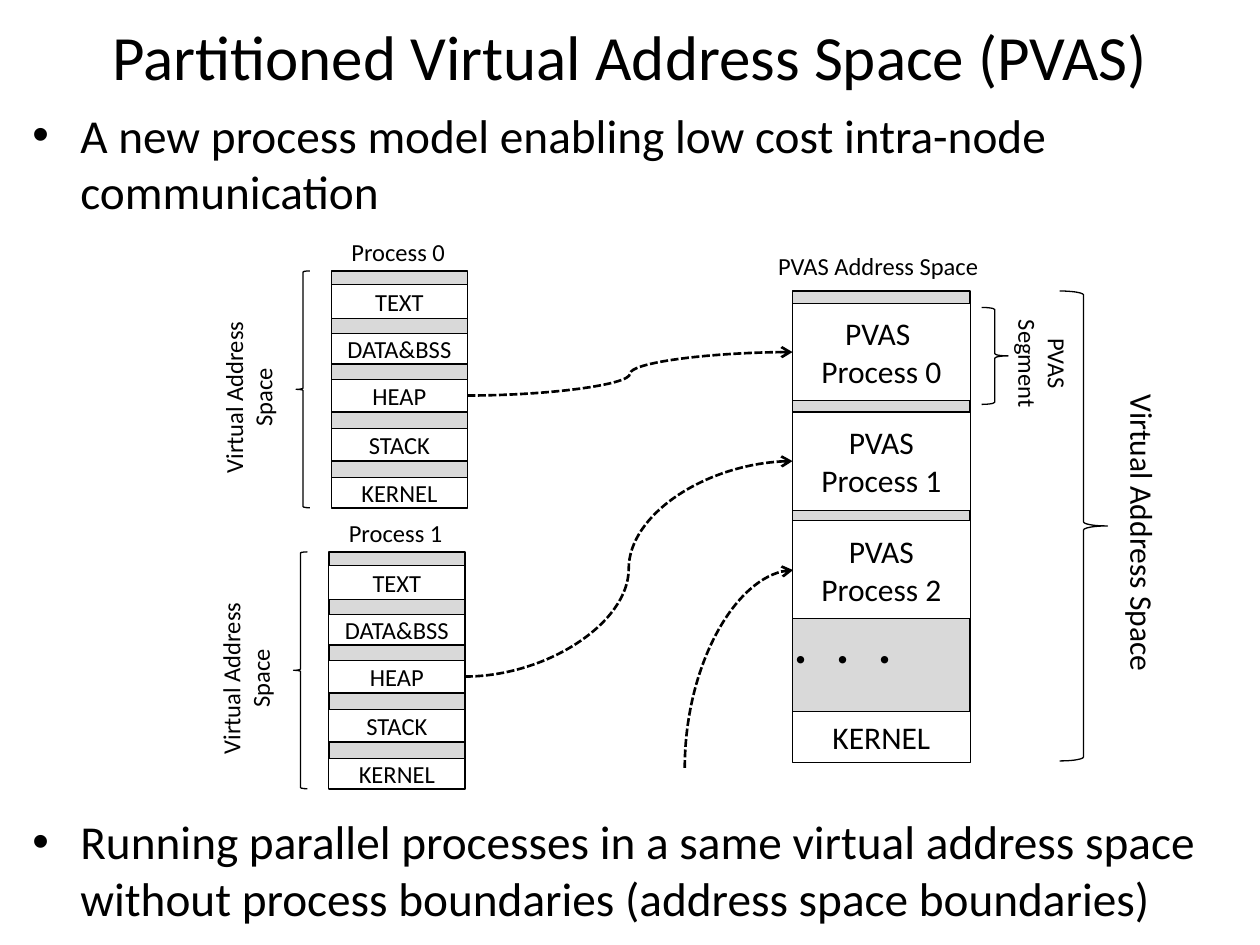
from dataclasses import dataclass

from lxml import etree
from pptx import Presentation
from pptx import util as u
from pptx.dml.color import RGBColor
from pptx.enum import dml, shapes, text
from pptx.oxml import ns

Inches, Pt = u.Inches, u.Pt
SHAPE, ALIGN, ANCHOR = shapes.MSO_SHAPE, text.PP_ALIGN, text.MSO_ANCHOR


@dataclass(frozen=True)
class Theme:
    font: str = "Calibri"
    ink: RGBColor = RGBColor(0, 0, 0)
    paper: RGBColor = RGBColor(255, 255, 255)
    gap: RGBColor = RGBColor(0xD9, 0xD9, 0xD9)
    title: float = 36
    body: float = 27
    dots: float = 20
    large: float = 18
    small: float = 14
    thin: float = 0.75
    frame: float = 1
    arrow: float = 1.5


theme = Theme()
deck = Presentation()
deck.slide_width, deck.slide_height = Inches(10), Inches(7.5)
page = deck.slides.add_slide(deck.slide_layouts[6])


def write(words, at=None, box=None, size=theme.small, align=ALIGN.CENTER,
          anchor=ANCHOR.TOP, wrap=False, grow=True, turn=0, vertical=False, bullet=False):
    """Write words, one paragraph per line, in a given shape or a new text box."""
    if box is None:
        box = page.shapes.add_textbox(*map(Inches, at))
    box.rotation = turn
    frame = box.text_frame
    frame.word_wrap, frame.vertical_anchor = wrap, anchor
    frame.auto_size = text.MSO_AUTO_SIZE.SHAPE_TO_FIT_TEXT if grow else text.MSO_AUTO_SIZE.NONE
    if vertical:
        frame._txBody.bodyPr.set("vert", "eaVert")
    for number, line in enumerate(words.split("\n")):
        para = frame.paragraphs[0] if number == 0 else frame.add_paragraph()
        para.alignment = align
        span = para.add_run()
        span.text = line
        span.font.name, span.font.size = theme.font, Pt(size)
        span.font.color.rgb = theme.ink
        if bullet:
            para.space_before = Pt(size * 0.2)
            props = para._p.get_or_add_pPr()
            props.set("marL", str(Inches(0.38)))
            props.set("indent", str(-Inches(0.38)))
            etree.SubElement(props, ns.qn("a:buFont")).set("typeface", "Arial")
            etree.SubElement(props, ns.qn("a:buChar")).set("char", "•")
    return box


def outline(kind, at, fill=None, weight=theme.thin):
    """Add a preset shape with a black outline and an optional fill."""
    box = page.shapes.add_shape(kind, *map(Inches, at))
    box.shadow.inherit = False
    if fill is None:
        box.fill.background()
    else:
        box.fill.solid()
        box.fill.fore_color.rgb = fill
    box.line.color.rgb, box.line.width = theme.ink, Pt(weight)
    return box


# Title and bullets
write("Partitioned Virtual Address Space (PVAS)", at=(0.5, 0.08, 9, 0.71),
      size=theme.title, anchor=ANCHOR.MIDDLE, wrap=True, grow=False)
for top, height, words in (
    (0.79, 1.01, "A new process model enabling low cost intra-node communication"),
    (6.4, 0.97, "Running parallel processes in a same virtual address space "
                "without process boundaries (address space boundaries)"),
):
    write(words, at=(0.16, top, 9.64, height), size=theme.body, align=ALIGN.LEFT,
          wrap=True, grow=False, bullet=True)

# PVAS address space
pvas_left, pvas_width = 6.29, 1.41
write("PVAS Address Space", at=(6.06, 1.94, 1.82, 0.34))
outline(SHAPE.RECTANGLE, (pvas_left, 2.31, pvas_width, 3.72), theme.gap, theme.frame)
pvas_parts = []
for top, height, words in (
    (2.41, 0.77, "PVAS \nProcess 0"),
    (3.27, 0.78, "PVAS\nProcess 1"),
    (4.13, 0.78, "PVAS\nProcess 2"),
    (5.65, 0.4, "KERNEL"),
):
    part = outline(SHAPE.RECTANGLE, (pvas_left, top, pvas_width, height), theme.paper)
    pvas_parts.append(write(words, box=part, size=theme.large, anchor=ANCHOR.MIDDLE,
                            wrap=True, grow=False))
write("・・・", at=(6.69, 5, 0.54, 0.53), size=theme.dots, align=ALIGN.LEFT,
      wrap=True, vertical=True)

# Separate address spaces of the two processes
segments = (("TEXT", 0.11, 0.27), ("DATA&BSS", 0.5, 0.24), ("HEAP", 0.86, 0.26),
            ("STACK", 1.25, 0.26), ("KERNEL", 1.64, 0.24))
heaps = []
for number, (left, top) in enumerate(((2.63, 2.15), (2.61, 4.38))):
    outline(SHAPE.RECTANGLE, (left, top, 1.08, 1.88), theme.gap, theme.frame)
    write(f"Process {number}", at=(left + 0.06, top - 0.32, 0.95, 0.34), align=ALIGN.LEFT)
    for name, offset, height in segments:
        part = outline(SHAPE.RECTANGLE, (left, top + offset, 1.08, height), theme.paper)
        write(name, box=part, anchor=ANCHOR.MIDDLE, wrap=True, grow=False)
        if name == "HEAP":
            heaps.append(part)
    outline(SHAPE.LEFT_BRACE, (left - 0.28, top, 0.11, 1.88))
    write("Virtual Address\nSpace", at=(left - 1.37, top + 0.72, 1.42, 0.57), turn=270)

# Braces and vertical labels on the right
outline(SHAPE.RIGHT_BRACE, (7.79, 2.44, 0.21, 0.77))
write("PVAS\nSegment", at=(7.89, 2.44, 0.67, 0.8), vertical=True)
outline(SHAPE.RIGHT_BRACE, (8.41, 2.31, 0.38, 3.73))
write("Virtual Address Space", at=(8.77, 3.03, 0.5, 2.32), size=theme.large,
      align=ALIGN.LEFT, vertical=True)

# Dashed arrows: two from the heaps, one rising from below
ends = ((3.7, 3.14, 6.29, 2.79), (3.69, 5.32, 6.29, 3.66), (6.65, 5.74, 5.08, 4.88))
for number, points in enumerate(ends):
    arrow = page.shapes.add_connector(shapes.MSO_CONNECTOR.CURVE, *map(Inches, points))
    arrow.line.color.rgb, arrow.line.width = theme.ink, Pt(theme.arrow)
    arrow.line.dash_style = dml.MSO_LINE.SQUARE_DOT
    etree.SubElement(arrow.line._get_or_add_ln(), ns.qn("a:tailEnd")).set("type", "arrow")
    props = arrow._element.spPr
    etree.SubElement(props, ns.qn("a:effectLst"))
    if number < len(heaps):
        arrow.begin_connect(heaps[number], 3)
        arrow.end_connect(pvas_parts[number], 1)
    else:
        props.find(ns.qn("a:xfrm")).set("rot", str(90 * 60000))
        props.find(ns.qn("a:prstGeom")).set("prst", "curvedConnector2")

deck.save("out.pptx")
